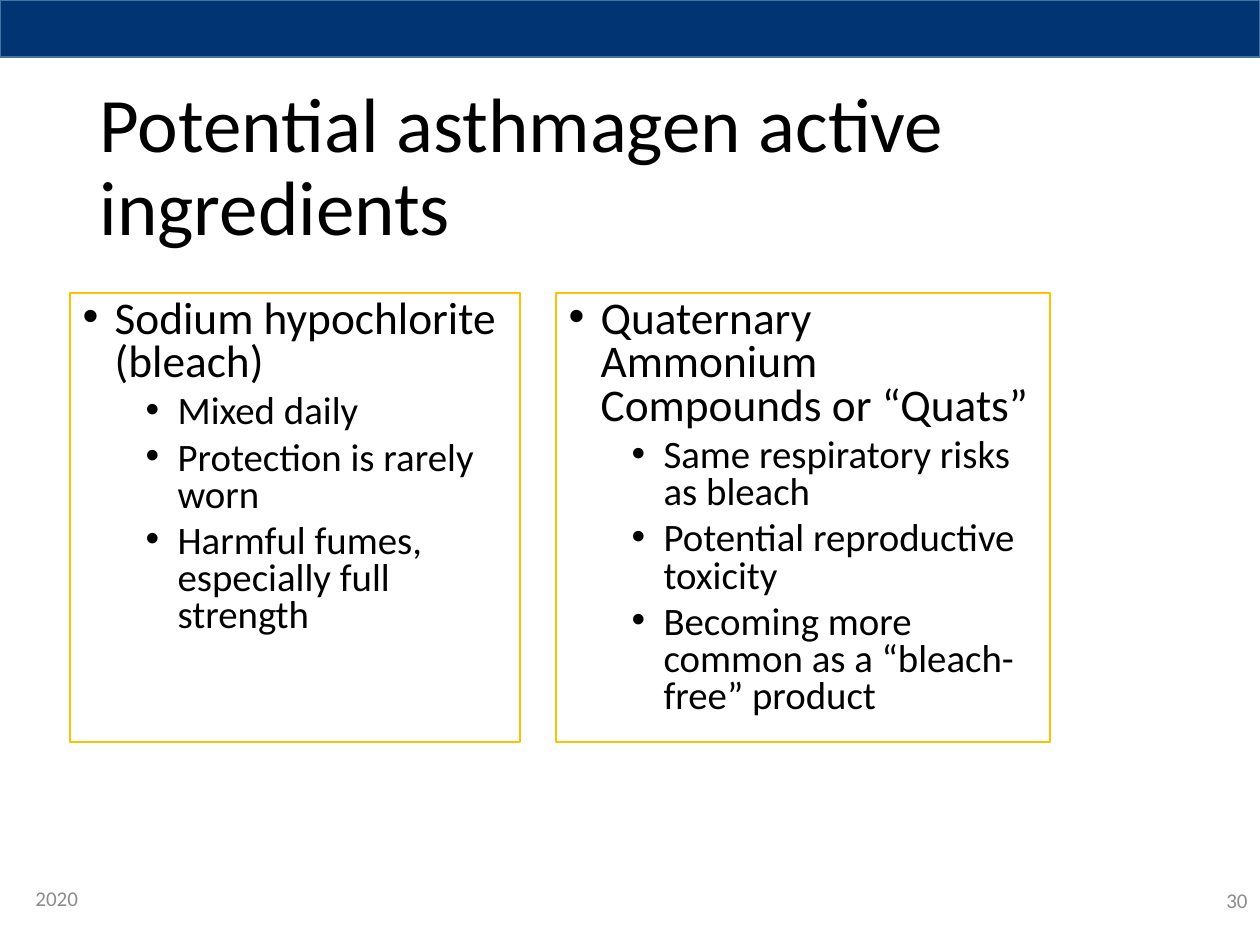
import pptx
import pptx.util
import pptx.dml.color
import pptx.enum.shapes
import pptx.enum.text
import pptx.oxml.ns
from lxml import etree

ALIGN = pptx.enum.text.PP_ALIGN
ANCHOR = pptx.enum.text.MSO_ANCHOR

TITLE = "Potential asthmagen active ingredients"
COLUMNS = [
    ("Sodium hypochlorite (bleach)",
     ["Mixed daily", "Protection is rarely worn",
      "Harmful fumes, especially full strength"]),
    ("Quaternary Ammonium Compounds or “Quats”",
     ["Same respiratory risks as bleach", "Potential reproductive toxicity",
      "Becoming more common as a “bleach-free” product"]),
]
FOOTERS = [("2020", (23, 873, 284, 50), ALIGN.LEFT),
           ("30", (976, 875, 284, 50), ALIGN.RIGHT)]

THEME = {
    "font": "Calibri",
    "text": "000000", "muted": "8C8C8C", "panel": "FFFFFF",
    "panel_line": "FFC000", "banner": "003473", "banner_line": "43739E",
    "title_pt": 44, "topic_pt": 25.9, "point_pt": 22.2, "footer_pt": 12,
}
PX = 914400 // 126
SLIDE = (1260, 945)
BANNER_BOX = (0, 0, 1260, 57)
TITLE_BOX = (87, 78, 1086, 183)
COLUMN_LEFT, COLUMN_TOP, COLUMN_HEIGHT, COLUMN_GAP = 70, 293, 449, 36
COLUMN_WIDTHS = [450, 494]
HANG, LEVEL_STEP = 32, 63


def rgb(name):
    return pptx.dml.color.RGBColor.from_string(THEME[name])


def place(sp, box):
    sp.left, sp.top, sp.width, sp.height = (v * PX for v in box)


def paint(sp, fill, line):
    sp.fill.solid()
    sp.fill.fore_color.rgb = rgb(fill)
    sp.line.color.rgb = rgb(line)
    sp.line.width = pptx.util.Pt(1)


def write(p, text, size, color="text", align=ALIGN.LEFT, spacing=1.0, before=0):
    p.alignment = align
    p.line_spacing = spacing
    p.space_before = pptx.util.Pt(before)
    r = p.add_run()
    r.text = text
    r.font.name = THEME["font"]
    r.font.size = pptx.util.Pt(THEME[size])
    r.font.color.rgb = rgb(color)


def add_bullet(p, level):
    p.level = level
    pPr = p._p.get_or_add_pPr()
    pPr.set("marL", str((HANG + level * LEVEL_STEP) * PX))
    pPr.set("indent", str(-HANG * PX))
    qn = pptx.oxml.ns.qn
    etree.SubElement(pPr, qn("a:buFont")).set("typeface", "Arial")
    etree.SubElement(pPr, qn("a:buChar")).set("char", "•")


def set_frame(sp, anchor):
    tf = sp.text_frame
    tf.word_wrap = True
    tf.auto_size = pptx.enum.text.MSO_AUTO_SIZE.NONE
    tf.vertical_anchor = anchor
    return tf


def fill_column(sp, topic, points):
    paint(sp, "panel", "panel_line")
    tf = set_frame(sp, ANCHOR.TOP)
    p = tf.paragraphs[0]
    add_bullet(p, 0)
    write(p, topic, "topic_pt", spacing=0.8)
    for point in points:
        p = tf.add_paragraph()
        add_bullet(p, 1)
        write(p, point, "point_pt", spacing=0.8, before=5)


def main():
    prs = pptx.Presentation()
    prs.slide_width, prs.slide_height = (v * PX for v in SLIDE)
    slide = prs.slides.add_slide(prs.slide_layouts.get_by_name("Two Content"))

    title = slide.shapes.title
    place(title, TITLE_BOX)
    write(set_frame(title, ANCHOR.MIDDLE).paragraphs[0], TITLE, "title_pt",
          spacing=0.9)

    left = COLUMN_LEFT
    for idx, ((topic, points), width) in enumerate(zip(COLUMNS, COLUMN_WIDTHS), 1):
        column = slide.placeholders[idx]
        place(column, (left, COLUMN_TOP, width, COLUMN_HEIGHT))
        fill_column(column, topic, points)
        left += width + COLUMN_GAP

    for text, box, align in FOOTERS:
        footer = slide.shapes.add_textbox(0, 0, 0, 0)
        place(footer, box)
        write(set_frame(footer, ANCHOR.MIDDLE).paragraphs[0], text, "footer_pt",
              color="muted", align=align)

    banner = slide.shapes.add_shape(
        pptx.enum.shapes.MSO_SHAPE.RECTANGLE, 0, 0, 0, 0)
    place(banner, BANNER_BOX)
    banner.shadow.inherit = False
    paint(banner, "banner", "banner_line")

    prs.save("out.pptx")


if __name__ == "__main__":
    main()
